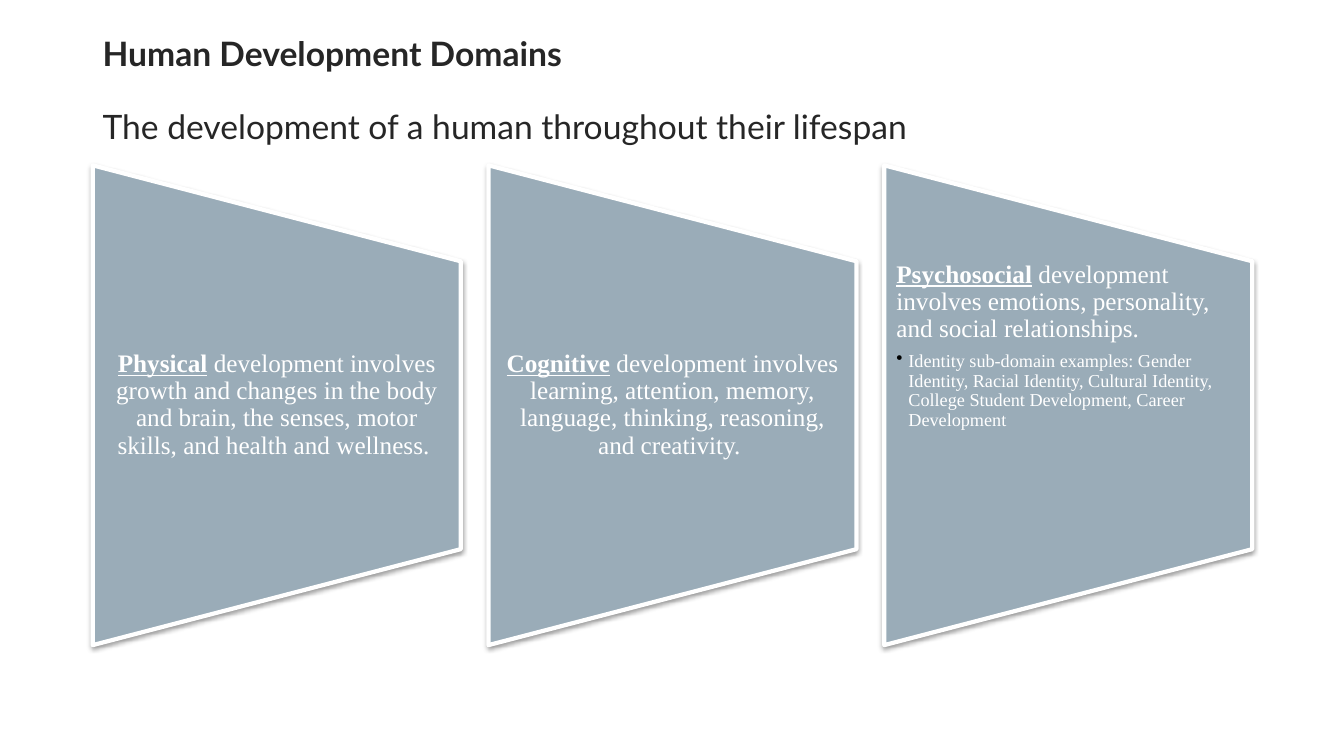
from lxml import etree
from pptx import Presentation
from pptx.dml.color import RGBColor
from pptx.enum.shapes import MSO_SHAPE
from pptx.enum.text import MSO_ANCHOR, PP_ALIGN
from pptx.oxml import parse_xml
from pptx.oxml.ns import nsdecls, qn
from pptx.util import Inches, Pt

TRAPEZOID = MSO_SHAPE.FLOWCHART_MANUAL_OPERATION
TOP, MIDDLE = MSO_ANCHOR.TOP, MSO_ANCHOR.MIDDLE
LEFT, CENTER = PP_ALIGN.LEFT, PP_ALIGN.CENTER

INK = RGBColor(0x26, 0x26, 0x26)
SLATE = RGBColor(0x9A, 0xAC, 0xB8)
WHITE = RGBColor(0xFF, 0xFF, 0xFF)

TITLE_FONT = {"name": "Lato", "size": Pt(24)}
BODY_FONT = {"name": "Times New Roman", "size": Pt(18)}
DETAIL_FONT = {"name": "Times New Roman", "size": Pt(13)}

DOMAINS = [
    ("Physical", " development involves growth and changes in the body and brain, "
     "the senses, motor skills, and health and wellness. ", None),
    ("Cognitive", " development involves learning, attention, memory, language, "
     "thinking, reasoning, and creativity. ", None),
    ("Psychosocial", " development involves emotions, personality, and social relationships.",
     "Identity sub-domain examples: Gender Identity, Racial Identity, Cultural Identity, "
     "College Student Development, Career Development"),
]

SHADOW = (
    f'<a:effectLst {nsdecls("a")}>'
    '<a:outerShdw blurRad="39370" dist="20320" dir="5400000" rotWithShape="0">'
    '<a:srgbClr val="000000"><a:alpha val="38000"/></a:srgbClr>'
    '</a:outerShdw></a:effectLst>'
)


def add_text_frame(s, x, y, w, h, anchor, inset_x, inset_y):
    tf = s.shapes.add_textbox(Inches(x), Inches(y), Inches(w), Inches(h)).text_frame
    frame_format = {
        "word_wrap": True, "vertical_anchor": anchor,
        "margin_left": Inches(inset_x), "margin_right": Inches(inset_x),
        "margin_top": Inches(inset_y), "margin_bottom": Inches(inset_y),
    }
    for name, value in frame_format.items():
        setattr(tf, name, value)
    return tf


def add_run(p, text, color, **font):
    r = p.add_run()
    r.text = text
    for name, value in font.items():
        setattr(r.font, name, value)
    r.font.color.rgb = color


def add_bullet(p):
    pPr = p._p.get_or_add_pPr()
    pPr.set("marL", str(Inches(0.12)))
    pPr.set("indent", str(-Inches(0.12)))
    color = etree.SubElement(pPr, qn("a:buClr"))
    etree.SubElement(color, qn("a:srgbClr")).set("val", "000000")
    etree.SubElement(pPr, qn("a:buChar")).set("char", "•")


def add_title(s, x, y, w, h):
    tf = add_text_frame(s, x, y, w, h, MIDDLE, 0.1, 0.05)
    heading, subtitle = tf.paragraphs[0], tf.add_paragraph()
    heading.line_spacing = subtitle.line_spacing = 0.9
    subtitle.space_before = Pt(26)
    add_run(heading, "Human Development Domains", INK, bold=True, **TITLE_FONT)
    add_run(subtitle, "The development of a human throughout their lifespan", INK,
            bold=False, **TITLE_FONT)


def add_domain(s, x, y, w, h, term, text, detail):
    panel = s.shapes.add_shape(TRAPEZOID, Inches(x + (w - h) / 2), Inches(y + (h - w) / 2),
                               Inches(h), Inches(w))
    panel.rotation = 270
    panel.fill.solid()
    panel.fill.fore_color.rgb = SLATE
    panel.line.color.rgb = WHITE
    panel.line.width = Pt(3)
    panel._element.spPr.append(parse_xml(SHADOW))

    tf = add_text_frame(s, x, y + h / 5, w, h * 3 / 5, TOP if detail else MIDDLE, 0.12, 0)
    p = tf.paragraphs[0]
    p.alignment = LEFT if detail else CENTER
    p.line_spacing = 0.9
    p.space_after = Pt(6.3)
    add_run(p, term, WHITE, bold=True, underline=True, **BODY_FONT)
    add_run(p, text, WHITE, **BODY_FONT)
    if detail:
        p = tf.add_paragraph()
        p.level = 1
        p.line_spacing = 0.9
        add_bullet(p)
        add_run(p, detail, WHITE, **DETAIL_FONT)


def main():
    prs = Presentation()
    prs.slide_width, prs.slide_height = Inches(13.33), Inches(7.5)
    s = prs.slides.add_slide(prs.slide_layouts[6])
    add_title(s, 0.92, 0.19, 11.5, 1.45)
    for i, domain in enumerate(DOMAINS):
        add_domain(s, 0.92 + i * 3.925, 1.64, 3.65, 4.76, *domain)
    prs.save("out.pptx")


if __name__ == "__main__":
    main()
